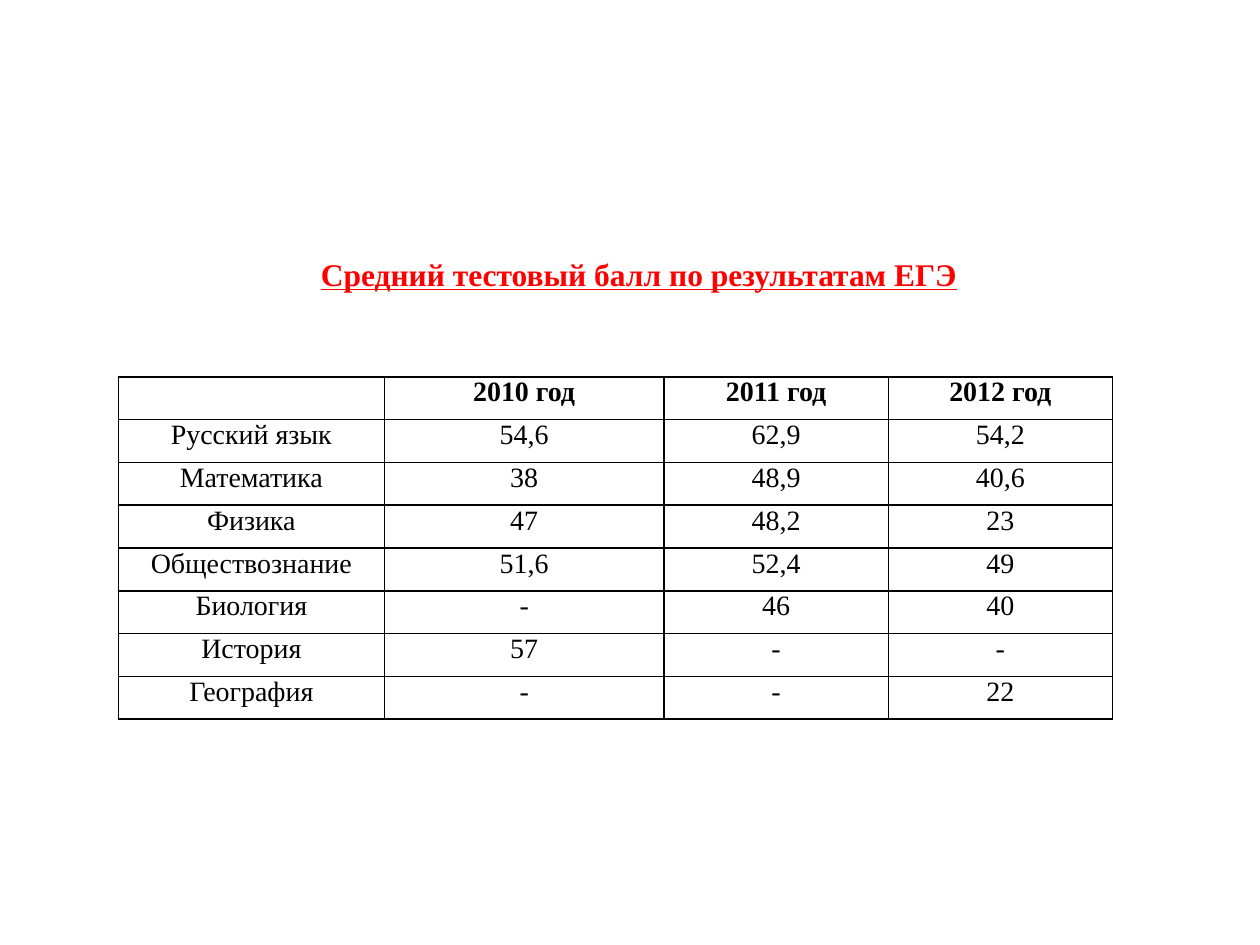
"""Build a slide with a table of average exam scores by year."""
from lxml.etree import SubElement
from pptx import Presentation
from pptx.dml.color import RGBColor
from pptx.enum.text import MSO_ANCHOR, MSO_AUTO_SIZE, PP_ALIGN
from pptx.oxml.ns import qn
from pptx.util import Inches, Pt

HUES = {"ink": "000000", "title": "FF0000"}
FONT = "Times New Roman"
COLS = (2.11, 2.22, 1.78, 1.78)
HIGH = 0.34
ROWS = (
    ("", "2010 год", "2011 год", "2012 год"),
    ("Русский язык", "54,6", "62,9", "54,2"),
    ("Математика", "38", "48,9", "40,6"),
    ("Физика", "47", "48,2", "23"),
    ("Обществознание", "51,6", "52,4", "49"),
    ("Биология", "-", "46", "40"),
    ("История", "57", "-", "-"),
    ("География", "-", "-", "22"),
)


def put_text(frame, text, size=16, hue="ink", bold=False, line=False):
    frame.text = text
    para = frame.paragraphs[0]
    para.alignment = PP_ALIGN.CENTER
    for run in para.runs:
        font = run.font
        font.name, font.size = FONT, Pt(size)
        font.bold, font.underline = bold, line
        font.color.rgb = RGBColor.from_string(HUES[hue])


def add_rules(cell):
    props = cell._tc.get_or_add_tcPr()
    for at, side in enumerate(("lnL", "lnR", "lnT", "lnB")):
        rule = props.makeelement(qn(f"a:{side}"), {"w": str(Pt(1))})
        fill = SubElement(rule, qn("a:solidFill"))
        SubElement(fill, qn("a:srgbClr"), val=HUES["ink"])
        props.insert(at, rule)


def add_title(slide, text):
    title = slide.shapes.title
    title.left, title.top = Inches(2.42), Inches(1.95)
    title.width, title.height = Inches(5.3), Inches(0.71)
    frame = title.text_frame
    frame.word_wrap = False
    frame.auto_size = MSO_AUTO_SIZE.NONE
    frame.vertical_anchor = MSO_ANCHOR.TOP
    frame.margin_top = Inches(0.07)
    put_text(frame, text, size=18, hue="title", bold=True, line=True)


def add_scores(slide):
    shape = slide.shapes.add_table(
        len(ROWS), len(COLS), Inches(0.94), Inches(2.99),
        Inches(sum(COLS)), Inches(HIGH * len(ROWS)))
    table = shape.table
    table.first_row = table.horz_banding = False
    for col, wide in zip(table.columns, COLS):
        col.width = Inches(wide)
    for y, row in enumerate(ROWS):
        table.rows[y].height = Inches(HIGH)
        for x, text in enumerate(row):
            cell = table.cell(y, x)
            cell.margin_left = cell.margin_right = Inches(0.07)
            cell.margin_top = cell.margin_bottom = 0
            cell.fill.background()
            add_rules(cell)
            put_text(cell.text_frame, text, bold=y == 0)


def main():
    deck = Presentation()
    deck.slide_width, deck.slide_height = Inches(10), Inches(7.5)
    slide = deck.slides.add_slide(deck.slide_layouts[5])
    add_title(slide, "Средний тестовый балл по результатам ЕГЭ")
    add_scores(slide)
    deck.save("out.pptx")


if __name__ == "__main__":
    main()
